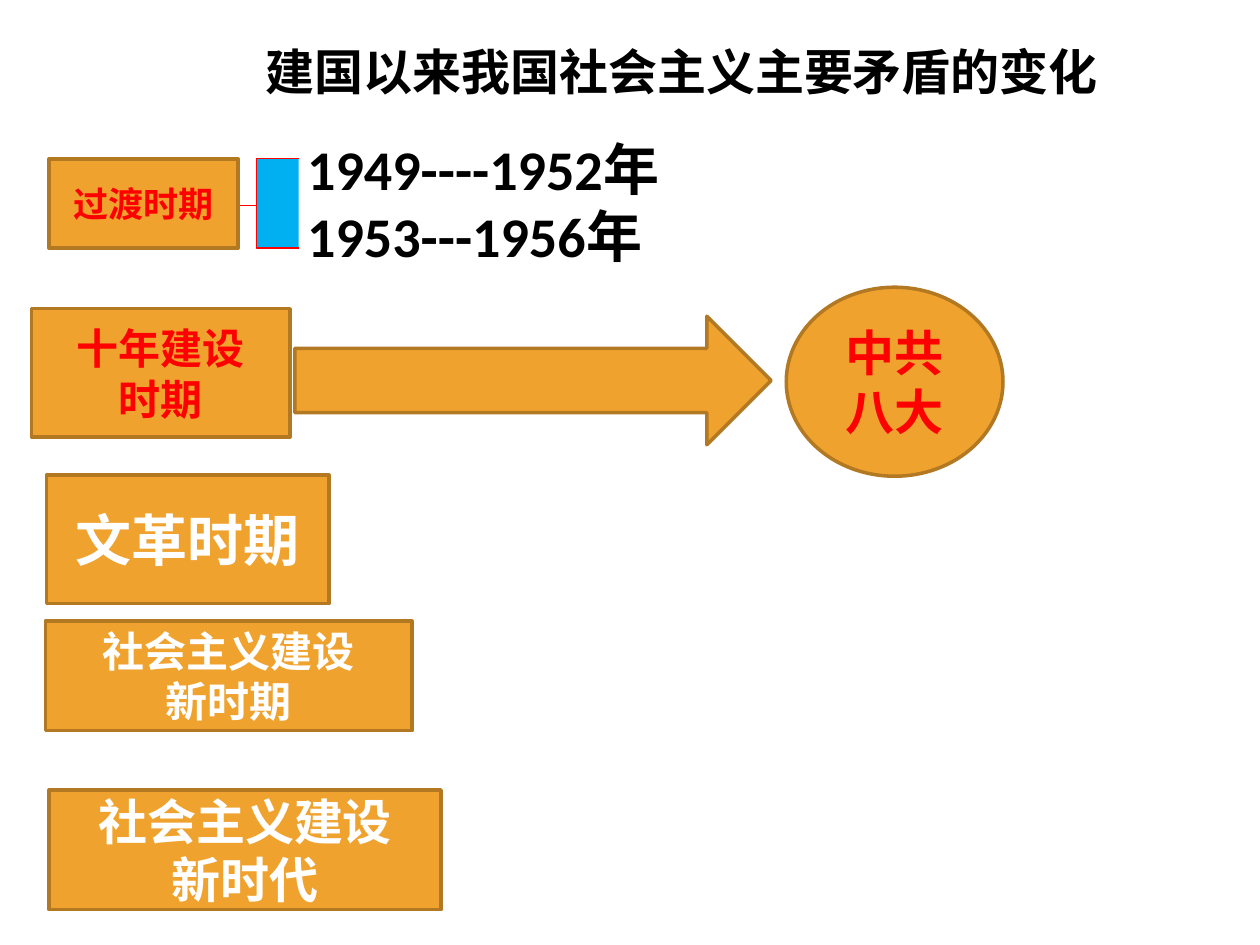
from pptx import Presentation
from pptx.dml.color import RGBColor
from pptx.enum.shapes import MSO_SHAPE
from pptx.enum.text import MSO_ANCHOR, MSO_AUTO_SIZE, PP_ALIGN
from pptx.util import Inches, Pt

COLORS = {
    "orange": "F0A22E",
    "brown": "B27822",
    "blue": "00B0F0",
    "red": "FF0000",
    "white": "FFFFFF",
    "black": "000000",
}

PERIODS = [
    ((0.39, 1.26, 1.5, 0.71), "过渡时期", 20, "red"),
    ((0.25, 2.45, 2.05, 1.02), "十年建设\n时期", 24, "red"),
    ((0.37, 3.77, 2.24, 1.02), "文革时期", 32, "white"),
    ((0.36, 4.93, 2.91, 0.87), "社会主义建设\n新时期", 24, "white"),
    ((0.39, 6.27, 3.11, 0.95), "社会主义建设\n新时代", 28, "white"),
]


def color(name):
    return RGBColor.from_string(COLORS[name])


def to_inches(box):
    return [Inches(length) for length in box]


def write_text(frame, text, size, ink="black", font="Karla",
               align=PP_ALIGN.CENTER, anchor=MSO_ANCHOR.MIDDLE, wrap=True):
    frame.word_wrap = wrap
    frame.vertical_anchor = anchor
    for index, line in enumerate(text.split("\n")):
        para = frame.paragraphs[0] if index == 0 else frame.add_paragraph()
        para.alignment = align
        span = para.add_run()
        span.text = line
        span.font.name = font
        span.font.size = Pt(size)
        span.font.bold = True
        span.font.color.rgb = color(ink)


def add_figure(page, kind, box, fill="orange", line="brown", weight=2):
    figure = page.shapes.add_shape(kind, *to_inches(box))
    figure.shadow.inherit = False
    figure.fill.solid()
    figure.fill.fore_color.rgb = color(fill)
    figure.line.color.rgb = color(line)
    figure.line.width = Pt(weight)
    return figure


def add_title(page, box):
    title = page.shapes.title
    title.left, title.top, title.width, title.height = to_inches(box)
    write_text(title.text_frame, "建国以来我国社会主义主要矛盾的变化", 28,
               align=PP_ALIGN.LEFT, anchor=MSO_ANCHOR.TOP, wrap=False)
    title.text_frame.auto_size = MSO_AUTO_SIZE.SHAPE_TO_FIT_TEXT


def add_years(page, box):
    left, top, width, height = box
    years = page.shapes.add_textbox(*to_inches(box))
    write_text(years.text_frame, "1949----1952年\n1953---1956年", 32,
               font="Calibri", align=PP_ALIGN.LEFT, anchor=MSO_ANCHOR.TOP)
    years.text_frame.auto_size = MSO_AUTO_SIZE.SHAPE_TO_FIT_TEXT
    brace = add_figure(page, MSO_SHAPE.LEFT_BRACE,
                       (left - 0.64, top + 0.24, 0.67, 0.71),
                       fill="blue", line="red", weight=0.79)
    brace.adjustments[0] = 0
    brace.adjustments[1] = 0.52


def add_periods(page):
    for box, text, size, ink in PERIODS:
        period = add_figure(page, MSO_SHAPE.RECTANGLE, box)
        write_text(period.text_frame, text, size, ink)


def add_congress(page, box):
    left, top, width, height = box
    add_figure(page, MSO_SHAPE.RIGHT_ARROW, (left, top + 0.23, 3.78, 1.02))
    congress = add_figure(page, MSO_SHAPE.OVAL,
                          (left + width - 1.72, top, 1.72, height))
    write_text(congress.text_frame, "中共八大", 28, "red")


def main():
    deck = Presentation()
    deck.slide_width, deck.slide_height = Inches(10), Inches(7.5)
    page = deck.slides.add_slide(deck.slide_layouts[5])
    add_title(page, (2.01, 0.28, 6.88, 0.57))
    add_years(page, (2.34, 1.02, 7.8, 1.18))
    add_periods(page)
    add_congress(page, (2.34, 2.28, 5.62, 1.5))
    deck.save("out.pptx")


if __name__ == "__main__":
    main()
